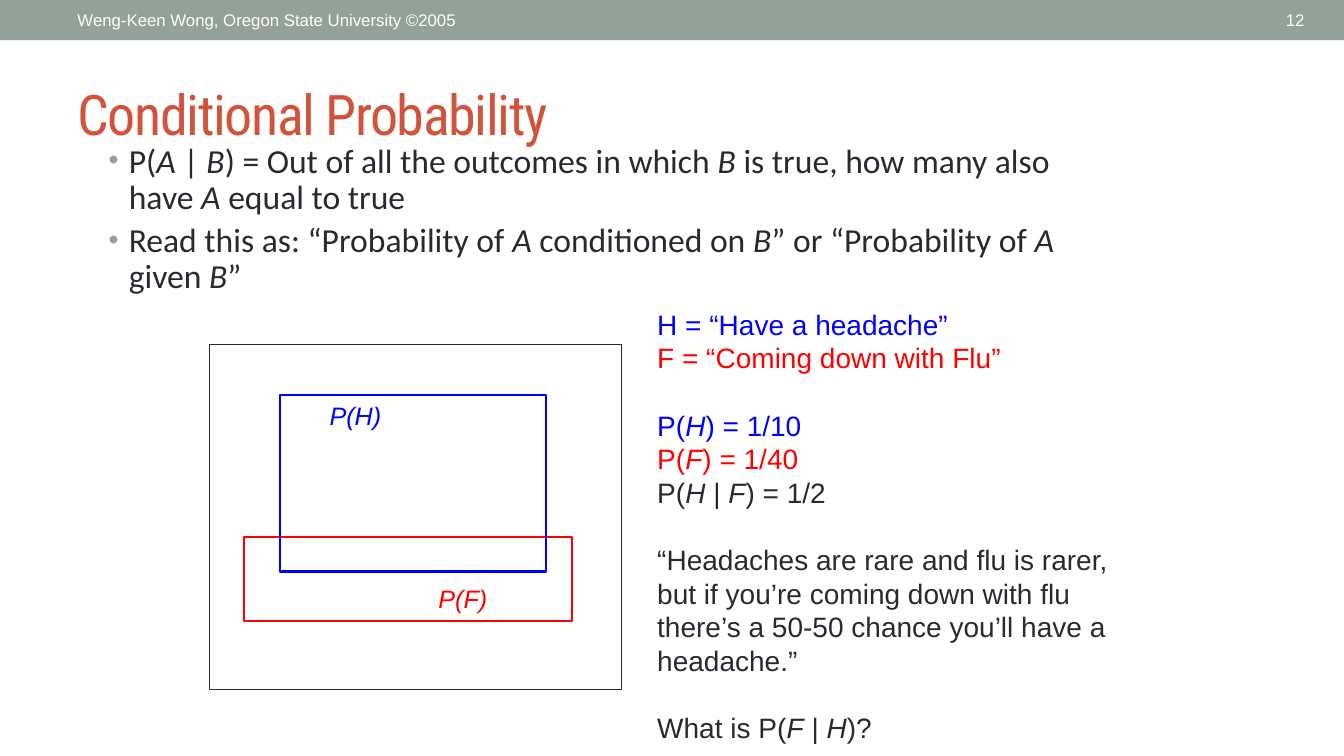
from dataclasses import dataclass

from lxml.etree import SubElement
from pptx import Presentation
from pptx.dml.color import RGBColor
from pptx.enum.shapes import MSO_SHAPE
from pptx.enum.text import MSO_ANCHOR, PP_ALIGN
from pptx.oxml.ns import qn
from pptx.util import Pt

PX = 9144  # 100 px to the inch


@dataclass(frozen=True)
class Theme:
    sage: str = "93A299"
    title: str = "D2533C"
    ink: str = "292934"
    headache: str = "0000FF"
    flu: str = "FF0000"
    white: str = "FFFFFF"
    sans: str = "Arial"
    body: str = "Calibri"
    heading: str = "Roboto Condensed"
    header_size: int = 12
    label_size: int = 18
    note_size: int = 20
    body_size: int = 24
    title_size: int = 40


T = Theme()

DEFINITIONS = [
    "P(*A *| *B*) = Out of all the outcomes in which *B* is true, "
    "how many also have *A* equal to true",
    "Read this as: “Probability of *A* conditioned on *B*” "
    "or “Probability of *A* given *B*”",
]

# Each group is set apart from the one before it.
NOTE_GROUPS = [
    [("H = “Have a headache”", T.headache),
     ("F = “Coming down with Flu”", T.flu)],
    [("P(*H*) = 1/10", T.headache),
     ("P(*F*) = 1/40", T.flu),
     ("P(*H *| *F*) = 1/2", T.ink)],
    [("“Headaches are rare and flu is rarer, but if you’re coming down with "
      "flu there’s a 50-50 chance you’ll have a headache.”", T.ink)],
    [("What is P(*F* | *H*)?", T.ink)],
]


def rgb(code):
    return RGBColor.from_string(code)


def emu(*lengths):
    return [n * PX for n in lengths]


def add_runs(p, text, size, color, font=T.sans):
    """Add text run by run; parts between asterisks are italic."""
    for i, part in enumerate(text.split("*")):
        if part:
            r = p.add_run()
            r.text = part
            r.font.name = font
            r.font.size = Pt(size)
            r.font.color.rgb = rgb(color)
            r.font.italic = i % 2 == 1


def add_textbox(slide, box, anchor=MSO_ANCHOR.TOP):
    tf = slide.shapes.add_textbox(*emu(*box)).text_frame
    tf.word_wrap = True
    tf.vertical_anchor = anchor
    return tf


def add_paragraph(tf):
    """Return the empty first paragraph, or a new one after it."""
    first = tf.paragraphs[0]
    return tf.add_paragraph() if first.runs else first


def add_label(slide, box, text, size, color, align=PP_ALIGN.LEFT,
              anchor=MSO_ANCHOR.TOP):
    p = add_textbox(slide, box, anchor).paragraphs[0]
    p.alignment = align
    add_runs(p, text, size, color)


def add_rect(slide, box, fill=None, line=None, weight=1.5):
    sp = slide.shapes.add_shape(MSO_SHAPE.RECTANGLE, *emu(*box))
    sp.shadow.inherit = False
    if fill:
        sp.fill.solid()
        sp.fill.fore_color.rgb = rgb(fill)
    else:
        sp.fill.background()
    if line:
        sp.line.color.rgb = rgb(line)
        sp.line.width = Pt(weight)
    else:
        sp.line.fill.background()


def set_bullet(p, color, indent):
    pPr = p._p.get_or_add_pPr()
    pPr.set("marL", str(indent * PX))
    pPr.set("indent", str(-indent * PX))
    bu_color = SubElement(pPr, qn("a:buClr"))
    SubElement(bu_color, qn("a:srgbClr"), val=color)
    SubElement(pPr, qn("a:buSzPct"), val="85000")
    SubElement(pPr, qn("a:buFont"), typeface=T.sans)
    SubElement(pPr, qn("a:buChar"), char="•")


def add_header(slide):
    add_rect(slide, (0, 0, 1333, 40), fill=T.sage)
    add_label(slide, (67, 2, 422, 36),
              "Weng-Keen Wong, Oregon State University ©2005",
              T.header_size, T.white, anchor=MSO_ANCHOR.MIDDLE)
    add_label(slide, (1262, 2, 45, 36), "12", T.header_size, T.white,
              PP_ALIGN.CENTER, MSO_ANCHOR.MIDDLE)


def set_title(slide, text):
    sp = slide.shapes.title
    sp.left, sp.top, sp.width, sp.height = emu(67, 58, 1200, 108)
    tf = sp.text_frame
    tf.vertical_anchor = MSO_ANCHOR.MIDDLE
    p = tf.paragraphs[0]
    p.alignment = PP_ALIGN.LEFT
    add_runs(p, text, T.title_size, T.title, T.heading)
    p.runs[0]._r.get_or_add_rPr().set("spc", "-100")


def add_definitions(slide):
    tf = add_textbox(slide, (98, 138, 994, 183))
    for text in DEFINITIONS:
        p = add_paragraph(tf)
        p.line_spacing = 0.9
        p.space_before = Pt(T.body_size * 0.2)
        set_bullet(p, T.sage, 20)
        add_runs(p, text, T.body_size, T.ink, T.body)


def add_notes_column(slide):
    tf = add_textbox(slide, (642, 300, 500, 448))
    line_height = Pt(T.note_size * 1.2)
    for g, group in enumerate(NOTE_GROUPS):
        for i, (text, color) in enumerate(group):
            p = add_paragraph(tf)
            p.line_spacing = line_height
            if g and i == 0:
                p.space_before = line_height
            add_runs(p, text, T.note_size, color)


def add_venn(slide):
    add_label(slide, (317, 392, 142, 40), "*P(H)*", T.label_size, T.headache)
    add_label(slide, (425, 574, 167, 40), "*P(F)*", T.label_size, T.flu)
    add_rect(slide, (208, 342, 408, 342), line=T.ink, weight=0.75)
    add_rect(slide, (242, 533, 325, 83), line=T.flu)
    add_rect(slide, (278, 392, 264, 175), line=T.headache)


def main():
    prs = Presentation()
    prs.slide_width, prs.slide_height = emu(1333, 750)
    slide = prs.slides.add_slide(prs.slide_layouts[5])
    add_header(slide)
    set_title(slide, "Conditional Probability")
    add_definitions(slide)
    add_venn(slide)
    add_notes_column(slide)
    prs.save("out.pptx")


if __name__ == "__main__":
    main()
